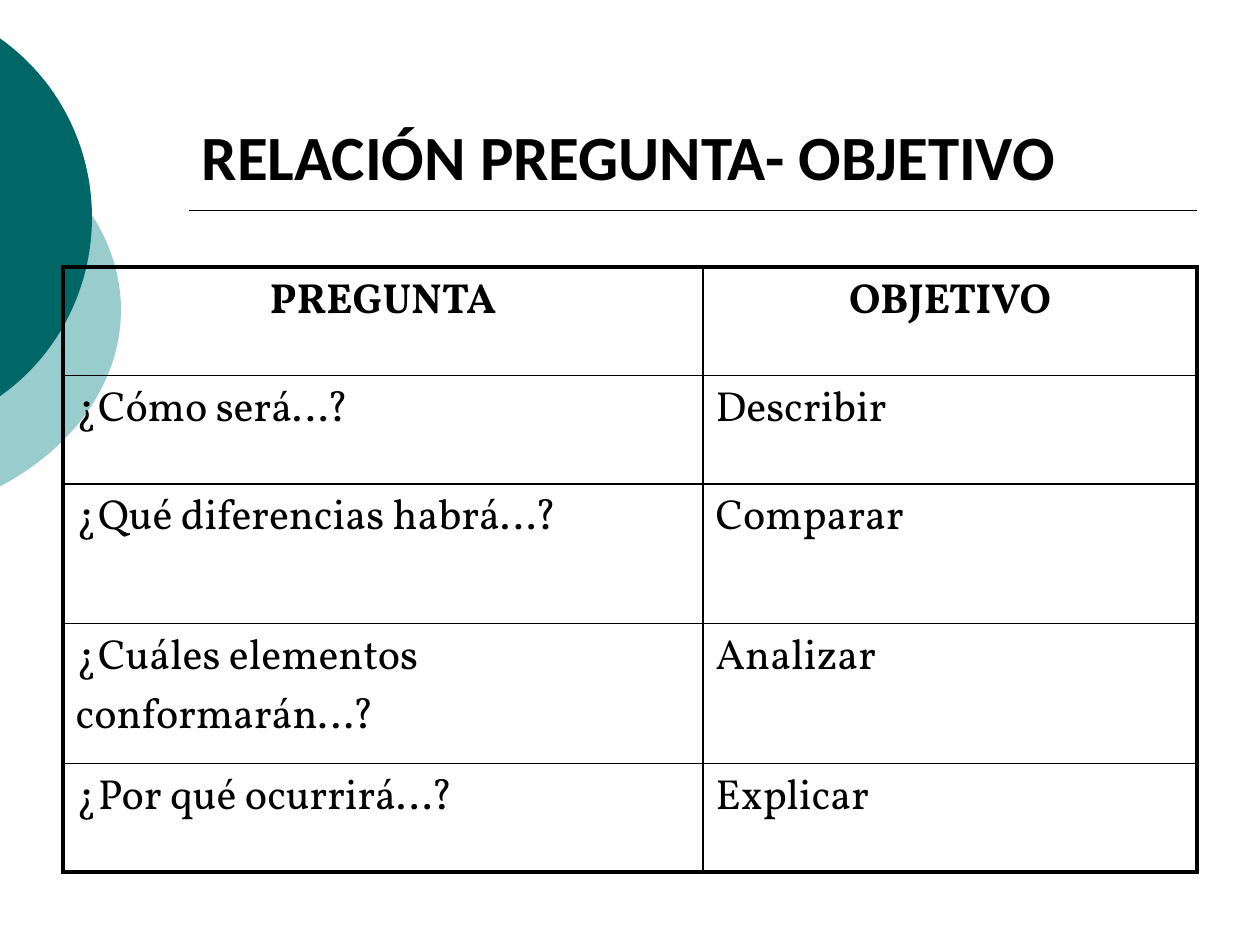
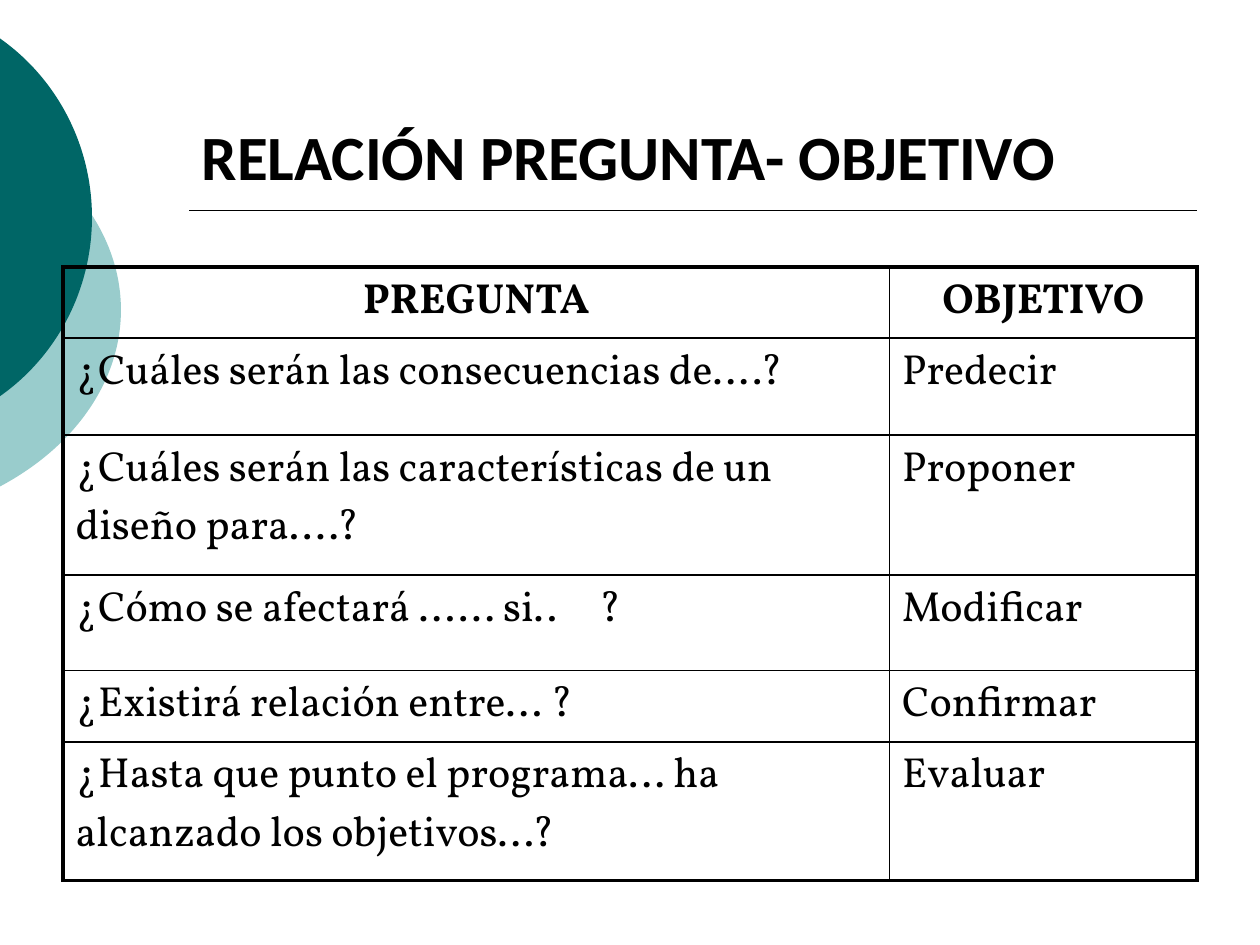
from dataclasses import dataclass
from lxml import etree
from pptx import Presentation, util as u
from pptx.dml import color
from pptx.enum import shapes, text
from pptx.oxml import ns

TITLE = "RELACIÓN PREGUNTA- OBJETIVO"
HEADERS = ("PREGUNTA", "OBJETIVO")
TABLES = [
    {
        "columns": (5.08, 3.92),
        "heights": (0.86, 0.86, 1.11, 1.11, 0.86),
        "rows": [
            ("¿Cómo será…?", "Describir"),
            ("¿Qué diferencias habrá…?", "Comparar"),
            ("¿Cuáles elementos conformarán…?", "Analizar"),
            ("¿Por qué ocurrirá...?", "Explicar"),
        ],
    },
    {
        "columns": (6.56, 2.44),
        "heights": (0.52, 0.77, 1.11, 0.76, 0.54, 1.1),
        "rows": [
            ("¿Cuáles serán las consecuencias de....?", "Predecir"),
            ("¿Cuáles serán las características de un diseño para....?", "Proponer"),
            ("¿Cómo se afectará ...... si..\t?", "Modificar"),
            ("¿Existirá relación entre... ?", "Confirmar"),
            ("¿Hasta que punto el programa... ha alcanzado los objetivos...?", "Evaluar"),
        ],
    },
]


@dataclass(frozen=True)
class Theme:
    ink: str = "000000"
    dark_disc: str = "006666"
    light_disc: str = "99CCCC"
    title_font: str = "Calibri"
    table_font: str = "Vollkorn"
    title_size: float = 36
    table_size: float = 24
    thin: float = 1
    thick: float = 2.25


THEME = Theme()
DISCS = [
    ((-3.54, 0.75, 4.5, 3.42), THEME.light_disc),
    ((-2.65, 0, 3.38, 3.45), THEME.dark_disc),
]
GAP_STOP = 4.15


def rgb(value):
    return color.RGBColor.from_string(value)


def style_paragraph(paragraph, font_name, size, bold, alignment):
    paragraph.alignment = alignment
    font = paragraph.font
    font.name, font.size, font.bold = font_name, u.Pt(size), bold
    font.color.rgb = rgb(THEME.ink)


def add_disc(slide, box, fill):
    disc = slide.shapes.add_shape(shapes.MSO_SHAPE.OVAL, *map(u.Inches, box))
    disc.shadow.inherit = False
    disc.fill.solid()
    disc.fill.fore_color.rgb = rgb(fill)
    disc.line.fill.background()
    return disc


def add_title_rule(slide):
    rule = slide.shapes.add_connector(
        shapes.MSO_CONNECTOR.STRAIGHT,
        u.Inches(1.5), u.Inches(1.67), u.Inches(9.5), u.Inches(1.67))
    rule.line.color.rgb = rgb(THEME.ink)
    rule.line.width = u.Pt(THEME.thin)
    etree.SubElement(rule.element.spPr, ns.qn("a:effectLst"))
    return rule


def decorate_layout(layout, slide):
    decorations = [add_disc(slide, *disc) for disc in DISCS]
    decorations.append(add_title_rule(slide))
    for shape in decorations:
        layout.shapes.element.append(shape.element)


def add_title(slide):
    title = slide.shapes.title
    title.left, title.top = u.Inches(1.5), u.Inches(0.33)
    title.width, title.height = u.Inches(8), u.Inches(1.25)
    frame = title.text_frame
    frame.text = TITLE
    frame.word_wrap = True
    frame.vertical_anchor = text.MSO_ANCHOR.BOTTOM
    style_paragraph(frame.paragraphs[0], THEME.title_font, THEME.title_size,
                    True, text.PP_ALIGN.LEFT)


def set_borders(cell, outer_edges):
    properties = cell._tc.get_or_add_tcPr()
    for position, (side, outer) in enumerate(zip("LRTB", outer_edges)):
        width = u.Pt(THEME.thick if outer else THEME.thin)
        line = etree.Element(ns.qn(f"a:ln{side}"), w=str(int(width)))
        fill = etree.SubElement(line, ns.qn("a:solidFill"))
        etree.SubElement(fill, ns.qn("a:srgbClr"), val=THEME.ink)
        properties.insert(position, line)


def add_tab_stop(paragraph, inches):
    tabs = etree.SubElement(paragraph._p.get_or_add_pPr(), ns.qn("a:tabLst"))
    etree.SubElement(tabs, ns.qn("a:tab"), pos=str(int(u.Inches(inches))), algn="l")


def add_question_table(slide, columns, heights, rows):
    content = [HEADERS, *rows]
    table = slide.shapes.add_table(
        len(content), len(columns), u.Inches(0.5), u.Inches(2.12),
        u.Inches(sum(columns)), u.Inches(sum(heights))).table
    table.first_row = table.horz_banding = False
    for column, width in zip(table.columns, columns):
        column.width = u.Inches(width)
    for row, height in zip(table.rows, heights):
        row.height = u.Inches(height)
    last_row, last_column = len(content) - 1, len(columns) - 1
    for row_index, row in enumerate(content):
        for column_index, wording in enumerate(row):
            cell = table.cell(row_index, column_index)
            cell.text = wording
            cell.fill.background()
            set_borders(cell, (column_index == 0, column_index == last_column,
                               row_index == 0, row_index == last_row))
            paragraph = cell.text_frame.paragraphs[0]
            paragraph.space_before = u.Pt(0.2 * THEME.table_size)
            if "\t" in wording:
                add_tab_stop(paragraph, GAP_STOP)
            is_header = row_index == 0
            style_paragraph(
                paragraph, THEME.table_font, THEME.table_size, is_header,
                text.PP_ALIGN.CENTER if is_header else text.PP_ALIGN.LEFT)


def main():
    presentation = Presentation()
    presentation.slide_width, presentation.slide_height = u.Inches(10), u.Inches(7.5)
    layout = presentation.slide_layouts.get_by_name("Title Only")
    for index, table in enumerate(TABLES):
        slide = presentation.slides.add_slide(layout)
        if index == 0:
            decorate_layout(layout, slide)
        add_title(slide)
        add_question_table(slide, **table)
    presentation.save("out.pptx")


if __name__ == "__main__":
    main()
